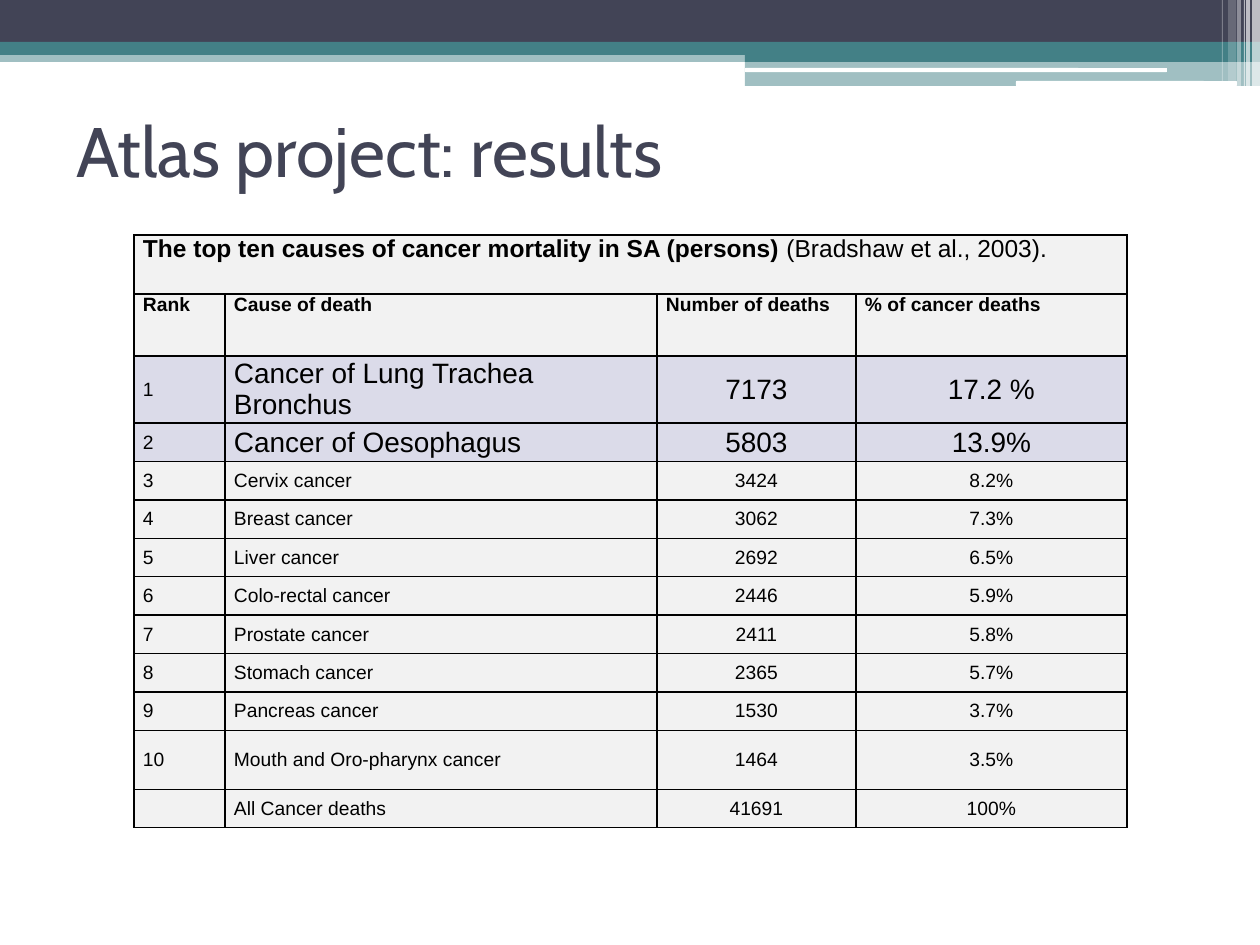
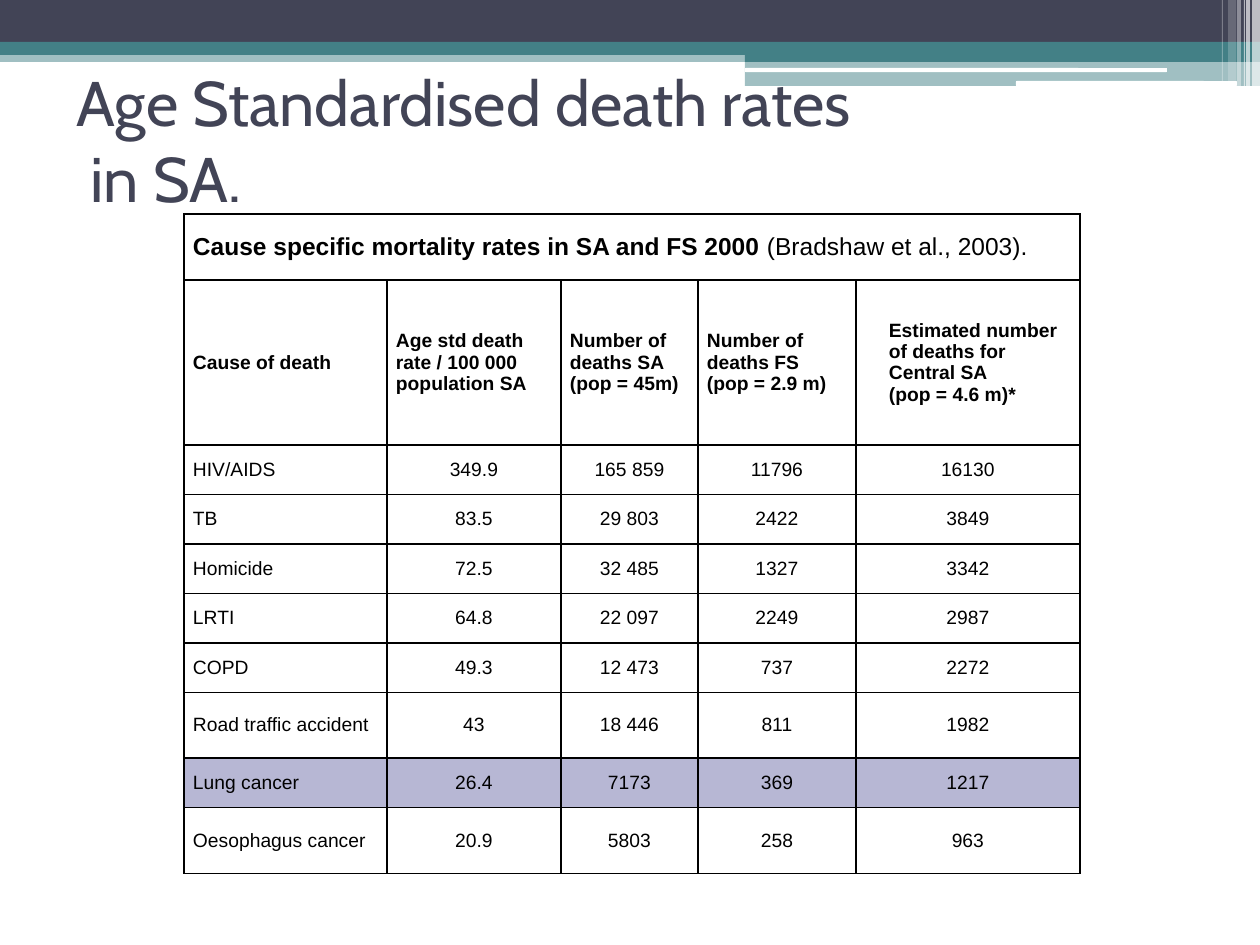
from lxml import etree
from pptx import Presentation
from pptx import util as u
from pptx.dml.color import RGBColor
from pptx.enum import shapes, text
from pptx.oxml import ns

PX = u.Inches(1) / 126
INK = RGBColor(0x42, 0x44, 0x56)
TEAL = RGBColor(0x43, 0x80, 0x86)
WHITE = RGBColor(0xFF, 0xFF, 0xFF)
BLACK = RGBColor(0, 0, 0)
PALE_GREY = RGBColor(0xF2, 0xF2, 0xF2)
PALE_LILAC = RGBColor(0xDB, 0xDB, 0xE9)
LILAC = RGBColor(0xB7, 0xB7, 0xD4)

BAR, ROUNDED = shapes.MSO_SHAPE.RECTANGLE, shapes.MSO_SHAPE.ROUNDED_RECTANGLE
LEFT, CENTER = text.PP_ALIGN.LEFT, text.PP_ALIGN.CENTER
TOP, MIDDLE = text.MSO_ANCHOR.TOP, text.MSO_ANCHOR.MIDDLE

BANDS = [
    (BAR, (0, 50, 1260, 12), TEAL, 50),
    (BAR, (0, 0, 1260, 42), INK, 100),
    (BAR, (0, 42, 1260, 13), TEAL, 100),
    (BAR, (745, 49, 515, 13), TEAL, 100),
    (BAR, (745, 62, 515, 24), TEAL, 50),
    (ROUNDED, (745, 68, 422, 4), WHITE, 100),
    (ROUNDED, (1016, 81, 221, 5), WHITE, 100),
]
STRIPES = [
    (1252, 8, 86, 65),
    (1246, 4, 86, 65),
    (1244, 1, 86, 60),
    (1237, 4, 86, 40),
    (1228, 8, 81, 20),
    (1222, 1, 81, 30),
]
BANDS += [(BAR, (x, 0, width, height), WHITE, opacity)
          for x, width, height, opacity in STRIPES]

SLIDES = [
    {
        "title": "Atlas project: results", "title_top": 76, "title_size": 40,
        "at": (134, 235), "height": 588, "columns": [91, 432, 199, 271],
        "tall_rows": {0: 59, 1: 62, 2: 62, 11: 59},
        "caption": "The top ten causes of cancer mortality in SA (persons) ",
        "header_anchor": TOP, "header_indents": {}, "left_columns": 2,
        "fill": PALE_GREY, "highlight": PALE_LILAC,
        "highlighted_rows": (2, 3), "highlight_size": 16,
        "rows": [
            ("Rank", "Cause of death", "Number of deaths", "% of cancer deaths"),
            ("1", "Cancer of Lung Trachea Bronchus", "7173", "17.2 %"),
            ("2", "Cancer of Oesophagus", "5803", "13.9%"),
            ("3", "Cervix cancer", "3424", "8.2%"),
            ("4", "Breast cancer", "3062", "7.3%"),
            ("5", "Liver cancer", "2692", "6.5%"),
            ("6", "Colo-rectal cancer", "2446", "5.9%"),
            ("7", "Prostate cancer", "2411", "5.8%"),
            ("8", "Stomach cancer", "2365", "5.7%"),
            ("9", "Pancreas cancer", "1530", "3.7%"),
            ("10", "Mouth and Oro-pharynx cancer", "1464", "3.5%"),
            ("", "All Cancer deaths", "41691", "100%"),
        ],
    },
    {
        "title": "Age Standardised death rates\n in SA.", "title_top": 66, "title_size": 36,
        "at": (184, 214), "height": 660, "columns": [203, 174, 137, 158, 224],
        "tall_rows": {0: 66, 1: 165, 7: 66, 9: 66},
        "caption": "Cause specific mortality rates in SA and FS 2000 ",
        "header_anchor": MIDDLE, "header_indents": {4: 24}, "left_columns": 1,
        "fill": WHITE, "highlight": LILAC,
        "highlighted_rows": (8,), "highlight_size": 11,
        "rows": [
            ("Cause of death", "Age std death rate / 100 000 population SA",
             "Number of deaths SA\n(pop = 45m)", "Number of deaths FS\n(pop = 2.9 m)",
             "Estimated number of deaths for Central SA\n(pop = 4.6 m)*"),
            ("HIV/AIDS", "349.9", "165 859", "11796", "16130"),
            ("TB", "83.5", "29 803", "2422", "3849"),
            ("Homicide", "72.5", "32 485", "1327", "3342"),
            ("LRTI", "64.8", "22 097", "2249", "2987"),
            ("COPD", "49.3", "12 473", "737", "2272"),
            ("Road traffic accident", "43", "18 446", "811", "1982"),
            ("Lung cancer", "26.4", "7173", "369", "1217"),
            ("Oesophagus cancer", "20.9", "5803", "258", "963"),
        ],
    },
]
CITATION = "(Bradshaw et al., 2003)."


def px(*lengths):
    return [round(length * PX) for length in lengths]


def apply(target, values):
    for name, value in values.items():
        setattr(target, name, value)


def add_run(paragraph, words, color=BLACK, **font):
    run = paragraph.add_run()
    run.text = words
    apply(run.font, {"name": "Arial", "bold": False, **font})
    run.font.color.rgb = color


def write(frame, words, align=LEFT, indent=0, **font):
    for number, line in enumerate(words.split("\n")):
        paragraph = frame.add_paragraph() if number else frame.paragraphs[0]
        paragraph.alignment = align
        if indent:
            paragraph._p.get_or_add_pPr().set("marL", str(px(indent)[0]))
        add_run(paragraph, line, **font)


def draw_bands(slide):
    for outline, place, color, opacity in BANDS:
        band = slide.shapes.add_shape(outline, *px(*place))
        band.shadow.inherit = False
        band.line.fill.background()
        band.fill.solid()
        band.fill.fore_color.rgb = color
        if opacity < 100:
            tint = band._element.spPr.find(ns.qn("a:solidFill"))[0]
            etree.SubElement(tint, ns.qn("a:alpha"), val=str(opacity * 1000))


def draw_title(slide, content):
    title = slide.shapes.add_textbox(*px(64, content["title_top"], 1134, 147))
    apply(title.text_frame, {"word_wrap": True, "vertical_anchor": MIDDLE})
    write(title.text_frame, content["title"], name="Cabin",
          size=u.Pt(content["title_size"]), color=INK)


def style_cell(cell, fill, anchor):
    side_margin = px(9)[0]
    apply(cell, {"margin_left": side_margin, "margin_right": side_margin,
                 "margin_top": 0, "margin_bottom": 0, "vertical_anchor": anchor})
    properties = cell._tc.get_or_add_tcPr()
    for side in ("lnL", "lnR", "lnT", "lnB"):
        border = etree.SubElement(properties, ns.qn(f"a:{side}"), w=str(u.Pt(1)))
        paint = etree.SubElement(border, ns.qn("a:solidFill"))
        etree.SubElement(paint, ns.qn("a:srgbClr"), val=str(BLACK))
    cell.fill.solid()
    cell.fill.fore_color.rgb = fill


def draw_table(slide, content):
    rows, columns, tall = content["rows"], content["columns"], content["tall_rows"]
    row_count = len(rows) + 1
    plain_height = (content["height"] - sum(tall.values())) / (row_count - len(tall))
    place = px(*content["at"], sum(columns), content["height"])
    table = slide.shapes.add_table(row_count, len(columns), *place).table
    apply(table, {"first_row": False, "horz_banding": False})
    for column, width in zip(table.columns, px(*columns)):
        column.width = width
    for r, row in enumerate(table.rows):
        row.height = px(tall.get(r, plain_height))[0]
        highlighted = r in content["highlighted_rows"]
        fill = content["highlight"] if highlighted else content["fill"]
        anchor = content["header_anchor"] if r < 2 else MIDDLE
        for c, cell in enumerate(row.cells):
            style_cell(cell, fill, anchor)
            if r == 0:
                continue
            header = r == 1
            size = content["highlight_size"] if highlighted and c else 11
            write(cell.text_frame, rows[r - 1][c],
                  align=LEFT if header or c < content["left_columns"] else CENTER,
                  indent=content["header_indents"].get(c, 0) if header else 0,
                  size=u.Pt(size), bold=header)
    caption = table.cell(0, 0)
    caption.merge(table.cell(0, len(columns) - 1))
    paragraph = caption.text_frame.paragraphs[0]
    add_run(paragraph, content["caption"], size=u.Pt(14), bold=True)
    add_run(paragraph, CITATION, size=u.Pt(14))


def main():
    deck = Presentation()
    apply(deck, {"slide_width": u.Inches(10), "slide_height": u.Inches(7.5)})
    for content in SLIDES:
        slide = deck.slides.add_slide(deck.slide_layouts[6])
        draw_bands(slide)
        draw_title(slide, content)
        draw_table(slide, content)
    deck.save("out.pptx")


if __name__ == "__main__":
    main()
